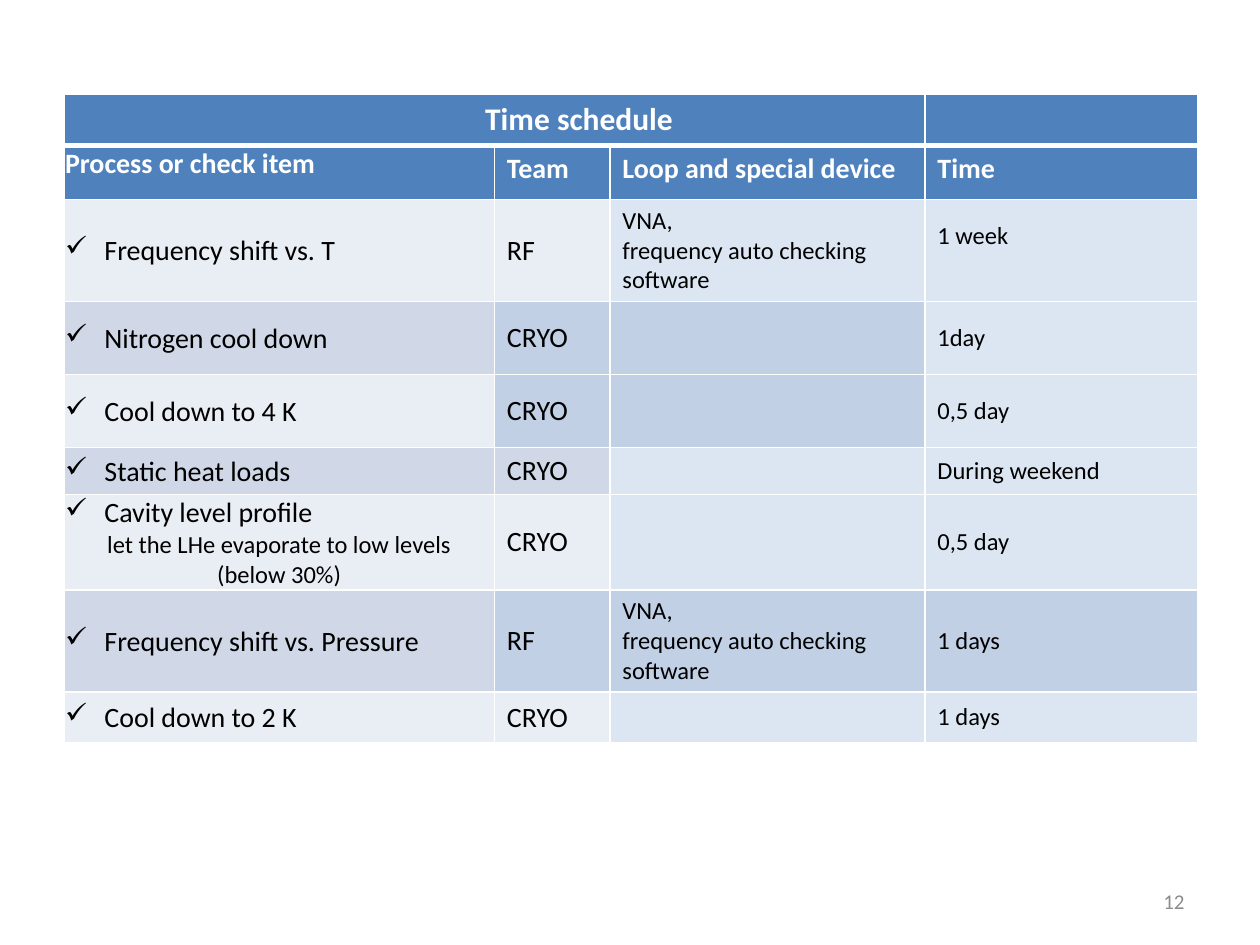
from lxml import etree
from pptx import Presentation
from pptx import util as u
from pptx.dml import color
from pptx.enum import text
from pptx.oxml import ns

BLUE, PALE, GREY, LIGHT, MID, SOFT = "4F81BD", "E9EDF4", "D0D8E8", "DCE6F2", "C1D0E5", "C1D0E5"
DEVICE = ["VNA,", "frequency auto checking software"]
HEADINGS = ["Process or check item", "Team", "Loop and special device", "Time"]
CAVITY = ["Cavity level profile", "let the LHe evaporate to low levels", "(below 30%)"]
ROWS = [
    (["Frequency shift vs. T"], "RF", DEVICE, "1 week", (PALE, PALE, LIGHT, LIGHT)),
    (["Nitrogen cool down"], "CRYO", [], "1day", (GREY, MID, MID, LIGHT)),
    (["Cool down to 4 K"], "CRYO", [], "0,5 day", (PALE, MID, MID, LIGHT)),
    (["Static heat loads"], "CRYO", [], "During weekend", (GREY, GREY, LIGHT, LIGHT)),
    (CAVITY, "CRYO", [], "0,5 day", (PALE, PALE, LIGHT, LIGHT)),
    (["Frequency shift vs. Pressure"], "RF", DEVICE, "1 days", (GREY, MID, MID, MID)),
    (["Cool down to 2 K"], "CRYO", [], "1 days", (PALE, PALE, LIGHT, LIGHT)),
]
WIDTHS = [246, 66, 180, 156]
HEIGHTS = [28.6, 30.9, 58.3, 41.7, 41.7, 26.7, 54.5, 58.3, 29.1]


def rgb(value):
    return color.RGBColor.from_string(value)


def write(paragraph, words, size=16, ink="000000", bold=False, align=text.PP_ALIGN.LEFT):
    paragraph.alignment = align
    run = paragraph.add_run()
    run.text = words
    run.font.name = "Calibri"
    run.font.size = u.Pt(size)
    run.font.bold = bold
    run.font.color.rgb = rgb(ink)


def add_check(paragraph):
    properties = paragraph._p.get_or_add_pPr()
    properties.set("marL", str(u.Pt(22.5)))
    properties.set("indent", str(u.Pt(-22.5)))
    etree.SubElement(properties, ns.qn("a:buChar")).set("char", "✓")


def style_cell(cell, fill, bottom=1):
    properties = cell._tc.get_or_add_tcPr()
    for side in ("L", "R", "T", "B"):
        line = etree.SubElement(properties, ns.qn("a:ln" + side))
        line.set("w", str(u.Pt(bottom if side == "B" else 1)))
        solid = etree.SubElement(line, ns.qn("a:solidFill"))
        etree.SubElement(solid, ns.qn("a:srgbClr")).set("val", "FFFFFF")
    cell.fill.solid()
    cell.fill.fore_color.rgb = rgb(fill)


def tighten(cell):
    cell.margin_left = cell.margin_right = cell.margin_top = u.Pt(0.7)
    cell.margin_bottom = u.Pt(0)


def write_lines(cell, lines, size):
    frame = cell.text_frame
    for index, words in enumerate(lines):
        paragraph = frame.paragraphs[0] if index == 0 else frame.add_paragraph()
        write(paragraph, words, size)
    if not lines:
        end = etree.SubElement(frame.paragraphs[0]._p, ns.qn("a:endParaRPr"))
        end.set("sz", str(size * 100))


presentation = Presentation()
presentation.slide_width, presentation.slide_height = u.Pt(720), u.Pt(540)
slide = presentation.slides.add_slide(presentation.slide_layouts[6])

frame = slide.shapes.add_table(len(HEIGHTS), len(WIDTHS), u.Pt(36.5), u.Pt(54),
                               u.Pt(sum(WIDTHS)), u.Pt(sum(HEIGHTS)))
table = frame.table
for column, width in zip(table.columns, WIDTHS):
    column.width = u.Pt(width)
for row, height in zip(table.rows, HEIGHTS):
    row.height = u.Pt(height)

for cell in table.rows[0].cells:
    style_cell(cell, BLUE, bottom=3)
title = table.cell(0, 0)
title.merge(table.cell(0, 2))
title.margin_left = u.Pt(104)
write(title.text_frame.paragraphs[0], "Time schedule", 18, "FFFFFF", True, text.PP_ALIGN.CENTER)

for cell, heading in zip(table.rows[1].cells, HEADINGS):
    style_cell(cell, BLUE)
    write(cell.text_frame.paragraphs[0], heading, 16, "FFFFFF", True)
tighten(table.cell(1, 0))

for number, (process, team, device, time, fills) in enumerate(ROWS, start=2):
    cells = list(table.rows[number].cells)
    for cell, fill in zip(cells, fills):
        style_cell(cell, fill)
        cell.vertical_anchor = text.MSO_ANCHOR.MIDDLE
    tighten(cells[0])
    write_lines(cells[0], process[:1], 16)
    add_check(cells[0].text_frame.paragraphs[0])
    for words in process[1:]:
        write(cells[0].text_frame.add_paragraph(), words, 14, align=text.PP_ALIGN.CENTER)
    write_lines(cells[1], [team], 16)
    write_lines(cells[2], device, 14)
    write_lines(cells[3], [time], 14)
table.cell(2, 3).margin_bottom = u.Pt(20.6)

page = slide.shapes.add_textbox(u.Pt(516), u.Pt(500.5), u.Pt(168), u.Pt(28.8)).text_frame
page.word_wrap = True
page.vertical_anchor = text.MSO_ANCHOR.MIDDLE
write(page.paragraphs[0], "12", 12, "8C8C8C", align=text.PP_ALIGN.RIGHT)

presentation.save("out.pptx")
